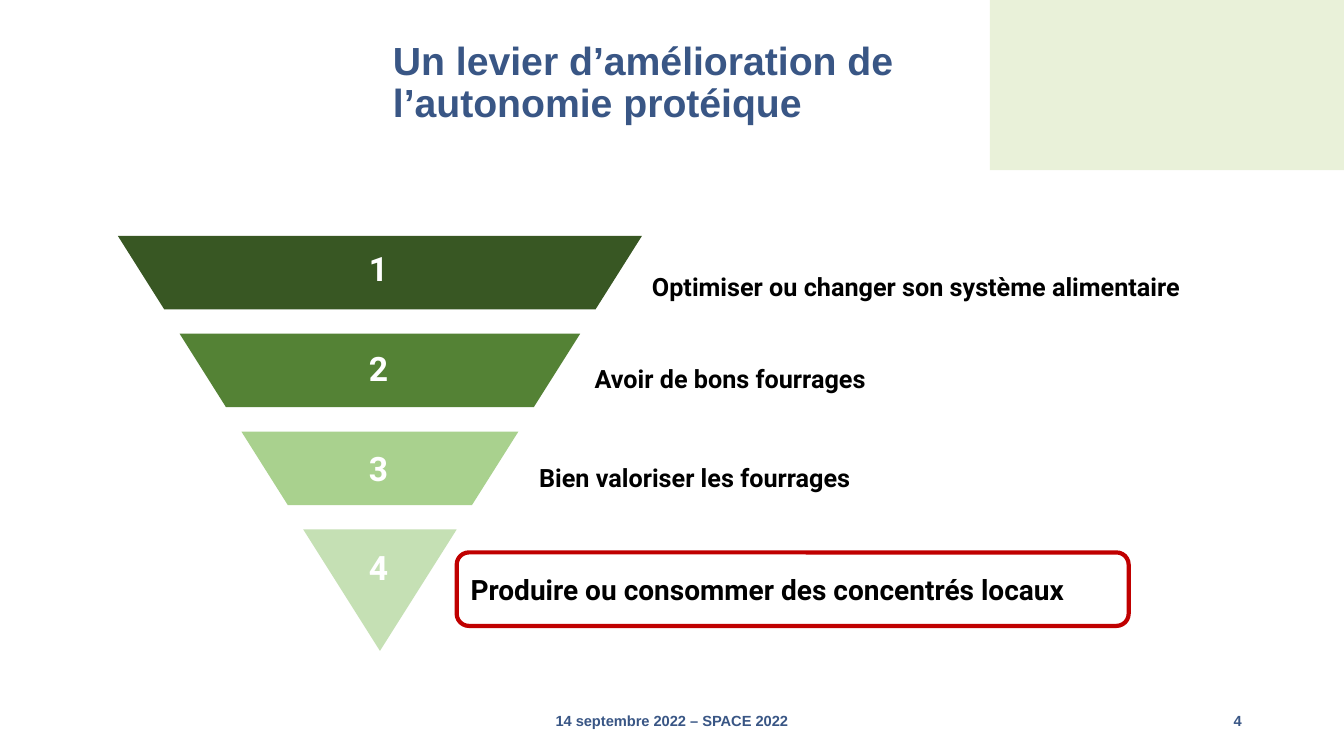
from pptx import Presentation
from pptx.dml.color import RGBColor
from pptx.enum.shapes import MSO_SHAPE
from pptx.enum.text import MSO_ANCHOR, PP_ALIGN
from pptx.util import Pt

RECTANGLE, ROUNDED = MSO_SHAPE.RECTANGLE, MSO_SHAPE.ROUNDED_RECTANGLE
TOP, MIDDLE = MSO_ANCHOR.TOP, MSO_ANCHOR.MIDDLE
LEFT, CENTER, RIGHT = PP_ALIGN.LEFT, PP_ALIGN.CENTER, PP_ALIGN.RIGHT

COLORS = {
    "corner": "E9F1D9", "navy": "395685", "black": "000000",
    "white": "FFFFFF", "red": "C00000",
    "level1": "385723", "level2": "548235", "level3": "A9D18E", "level4": "C5E0B4",
}


def paint(shape, color):
    shape.shadow.inherit = False
    shape.fill.solid()
    shape.fill.fore_color.rgb = RGBColor.from_string(COLORS[color])
    shape.line.fill.background()


def write(shape, text, size, font, color, align=LEFT, anchor=MIDDLE):
    frame = shape.text_frame
    frame.word_wrap = True
    frame.vertical_anchor = anchor
    paragraph = frame.paragraphs[0]
    paragraph.alignment = align
    run = paragraph.add_run()
    run.text = text
    run.font.size = Pt(size)
    run.font.name = font
    run.font.bold = True
    run.font.color.rgb = RGBColor.from_string(COLORS[color])
    return paragraph


prs = Presentation()
prs.slide_width, prs.slide_height = Pt(960), Pt(540)
slide = prs.slides.add_slide(prs.slide_layouts[6])
shapes = slide.shapes

corner = shapes.add_shape(RECTANGLE, Pt(707), Pt(0), Pt(253), Pt(121.5))
paint(corner, "corner")

event = shapes.add_textbox(Pt(318), Pt(500.5), Pt(324), Pt(28.75))
write(event, "14 septembre 2022 – SPACE 2022", 10.5, "Arial", "navy", CENTER)
page = shapes.add_textbox(Pt(678), Pt(500.5), Pt(216), Pt(28.75))
write(page, "4", 10.5, "Arial", "navy", RIGHT)

title = shapes.add_textbox(Pt(273.6), Pt(0), Pt(501), Pt(119.5))
heading = write(title, "Un levier d’amélioration de l’autonomie protéique", 28, "Arial", "navy")
heading.line_spacing = 0.9

levels = [
    ("Optimiser ou changer son système alimentaire", 18, 458.6, 190.1),
    ("Avoir de bons fourrages", 18, 417.6, 256.3),
    ("Bien valoriser les fourrages", 18, 378, 326.9),
    ("Produire ou consommer des concentrés locaux", 20, 329, 405.4),
]
CENTER_X, FUNNEL_TOP, APEX_Y = 271.4, 168.5, 465
SLOPE = 187.2 / (APEX_Y - FUNNEL_TOP)
BAND_STEP, BAND_HEIGHT = 69.9, 52.5
BADGE_TOP, BADGE_STEP = 177.1, 71.3

for index, (label, size, label_left, label_top) in enumerate(levels):
    color = f"level{index + 1}"
    top = FUNNEL_TOP + index * BAND_STEP
    bottom = top + BAND_HEIGHT
    upper = SLOPE * (APEX_Y - top)
    lower = SLOPE * (APEX_Y - bottom)
    if index == len(levels) - 1:
        tail = [(CENTER_X, APEX_Y)]
    else:
        tail = [(CENTER_X + lower, bottom), (CENTER_X - lower, bottom)]
    outline = shapes.build_freeform(Pt(CENTER_X - upper), Pt(top))
    outline.add_line_segments(
        [(Pt(x), Pt(y)) for x, y in [(CENTER_X + upper, top)] + tail], close=True)
    paint(outline.convert_to_shape(), color)

    badge = shapes.add_shape(
        ROUNDED, Pt(241.9), Pt(BADGE_TOP + index * BADGE_STEP), Pt(56.9), Pt(28.8))
    paint(badge, color)
    write(badge, str(index + 1), 24, "Roboto", "white", CENTER)

    caption = shapes.add_textbox(Pt(label_left), Pt(label_top), Pt(480), Pt(size * 1.6))
    write(caption, label, size, "Roboto", "black", anchor=TOP)

highlight = shapes.add_shape(ROUNDED, Pt(326.2), Pt(394.6), Pt(480), Pt(52.5))
highlight.shadow.inherit = False
highlight.fill.background()
highlight.line.color.rgb = RGBColor.from_string(COLORS["red"])
highlight.line.width = Pt(3)

prs.save("out.pptx")
